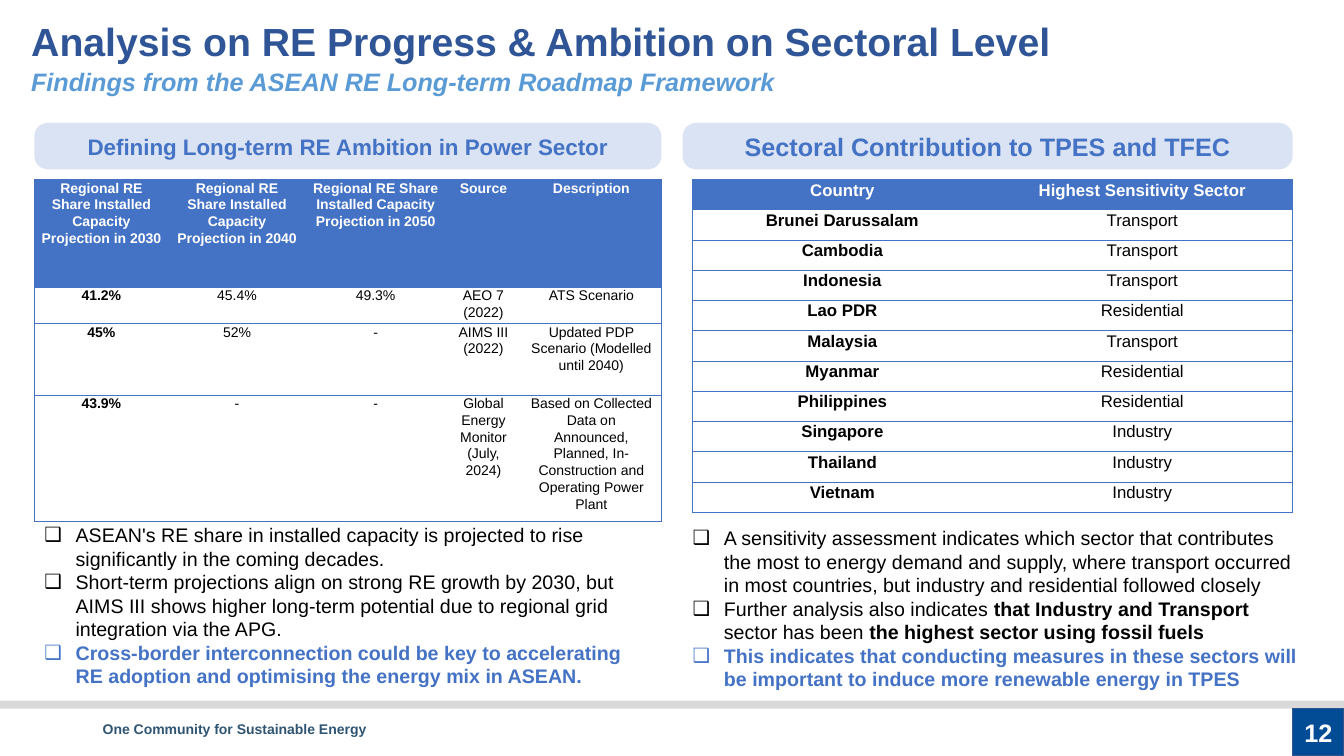
from lxml import etree
from pptx import Presentation
from pptx.dml.color import RGBColor
from pptx.enum.shapes import MSO_SHAPE
from pptx.enum.text import MSO_ANCHOR, MSO_AUTO_SIZE, PP_ALIGN
from pptx.oxml.ns import qn
from pptx.util import Inches, Pt

RECT, ROUNDED = MSO_SHAPE.RECTANGLE, MSO_SHAPE.ROUNDED_RECTANGLE
LEFT, CENTER = PP_ALIGN.LEFT, PP_ALIGN.CENTER
TOP, MIDDLE = MSO_ANCHOR.TOP, MSO_ANCHOR.MIDDLE
NO_AUTOFIT = MSO_AUTO_SIZE.NONE
TWO_CONTENT_LAYOUT = 3

COLORS = {
    "title": "2F5597", "subtitle": "5B9BD5", "accent": "4472C4",
    "banner": "DAE3F3", "rule": "D9D9D9", "number": "024C96",
    "number_edge": "325491", "motto": "2F5573",
    "white": "FFFFFF", "black": "000000",
}

AMBITION_ROWS = [
    ["Regional RE Share Installed Capacity Projection in 2030",
     "Regional RE Share Installed Capacity Projection in 2040",
     "Regional RE Share Installed Capacity Projection in 2050",
     "Source", "Description"],
    ["41.2%", "45.4%", "49.3%", "AEO 7 (2022)", "ATS Scenario"],
    ["45%", "52%", "-", "AIMS III (2022)",
     "Updated PDP Scenario (Modelled until 2040)"],
    ["43.9%", "-", "-", "Global Energy Monitor (July, 2024)",
     "Based on Collected Data on Announced, Planned, In-Construction "
     "and Operating Power Plant"],
]

SECTOR_ROWS = [
    ["Country", "Highest Sensitivity Sector"],
    ["Brunei Darussalam", "Transport"],
    ["Cambodia", "Transport"],
    ["Indonesia", "Transport"],
    ["Lao PDR", "Residential"],
    ["Malaysia", "Transport"],
    ["Myanmar", "Residential"],
    ["Philippines", "Residential"],
    ["Singapore", "Industry"],
    ["Thailand", "Industry"],
    ["Vietnam", "Industry"],
]

# Each point is a list of (text, bold) runs; the last point is the takeaway
AMBITION_POINTS = [
    [("ASEAN's RE share in installed capacity is projected to rise "
      "significantly in the coming decades.", False)],
    [("Short-term projections align on strong RE growth by 2030, but AIMS III "
      "shows higher long-term potential due to regional grid integration via "
      "the APG.", False)],
    [("Cross-border interconnection could be key to accelerating RE adoption "
      "and optimising the energy mix in ASEAN.", True)],
]
SECTOR_POINTS = [
    [("A sensitivity assessment indicates which sector that contributes the "
      "most to energy demand and supply, where transport occurred in most "
      "countries, but industry and residential followed closely", False)],
    [("Further analysis also indicates ", False),
     ("that Industry and Transport ", True),
     ("sector has been ", False),
     ("the highest sector using fossil fuels", True)],
    [("This indicates that conducting measures in these sectors will be "
      "important to induce more renewable energy in TPES", True)],
]


def rgb(name):
    return RGBColor.from_string(COLORS[name])


def style_font(font, size, color, bold=True, italic=False):
    values = {"name": "Arial", "size": Pt(size), "bold": bold, "italic": italic}
    for attribute, value in values.items():
        setattr(font, attribute, value)
    font.color.rgb = rgb(color)


def place(shape, left, top, width, height):
    box = {"left": left, "top": top, "width": width, "height": height}
    for attribute, value in box.items():
        setattr(shape, attribute, Inches(value))


def write_line(shape, text, size, color, align=LEFT, anchor=TOP,
               italic=False, wrap=True):
    frame = shape.text_frame
    frame.word_wrap, frame.vertical_anchor = wrap, anchor
    frame.auto_size = NO_AUTOFIT
    paragraph = frame.paragraphs[0]
    paragraph.alignment = align
    run = paragraph.add_run()
    run.text = text
    style_font(run.font, size, color, italic=italic)


def add_label(slide, box, text, size, color, **options):
    label = slide.shapes.add_textbox(*map(Inches, box))
    write_line(label, text, size, color, **options)


def add_block(slide, preset, box, fill, edge=None):
    block = slide.shapes.add_shape(preset, *map(Inches, box))
    block.shadow.inherit = False
    block.fill.solid()
    block.fill.fore_color.rgb = rgb(fill)
    if edge:
        block.line.color.rgb = rgb(edge)
        block.line.width = Pt(1)
    else:
        block.line.fill.background()
    return block


def add_banner(slide, left, width, text, size):
    banner = add_block(slide, ROUNDED, (left, 1.22, width, 0.46), "banner")
    banner.adjustments[0] = 0.29
    write_line(banner, text, size, "accent", CENTER, MIDDLE)


def set_borders(cell, first_column, last_column):
    shown = {"lnL": first_column, "lnR": last_column, "lnT": True, "lnB": True}
    properties = cell._tc.get_or_add_tcPr()
    for tag, visible in shown.items():
        line = etree.SubElement(properties, qn(f"a:{tag}"), w=str(Pt(0.5)))
        if visible:
            fill = etree.SubElement(line, qn("a:solidFill"))
            etree.SubElement(fill, qn("a:srgbClr"), val=COLORS["accent"])
        else:
            etree.SubElement(line, qn("a:noFill"))


def fill_cell(cell, text, size, header, bold):
    margins = {"margin_left": 0.07, "margin_right": 0.07,
               "margin_top": 0, "margin_bottom": 0}
    for attribute, value in margins.items():
        setattr(cell, attribute, Inches(value))
    cell.fill.solid()
    cell.fill.fore_color.rgb = rgb("accent" if header else "white")
    paragraph = cell.text_frame.paragraphs[0]
    paragraph.alignment, paragraph.line_spacing = CENTER, 1.07
    run = paragraph.add_run()
    run.text = text
    style_font(run.font, size, "white" if header else "black", bold)


def add_grid(slide, left, rows, widths, heights, size):
    box = (left, 1.78, sum(widths), sum(heights))
    grid = slide.shapes.add_table(len(rows), len(widths),
                                  *map(Inches, box)).table
    grid.horz_banding = False
    for column, width in zip(grid.columns, widths):
        column.width = Inches(width)
    for r, (texts, height) in enumerate(zip(rows, heights)):
        grid.rows[r].height = Inches(height)
        for c, text in enumerate(texts):
            cell = grid.cell(r, c)
            set_borders(cell, c == 0, c == len(widths) - 1)
            fill_cell(cell, text, size, r == 0, r == 0 or c == 0)


def write_points(body, box, points):
    place(body, *box)
    frame = body.text_frame
    frame.auto_size, frame.vertical_anchor = NO_AUTOFIT, TOP
    for index, runs in enumerate(points):
        paragraph = frame.paragraphs[0] if index == 0 else frame.add_paragraph()
        paragraph.space_before = Pt(0)
        properties = paragraph._p.get_or_add_pPr()
        properties.set("marL", str(Inches(0.31)))
        properties.set("indent", str(-Inches(0.31)))
        etree.SubElement(properties, qn("a:buChar"), char="❑")
        color = "accent" if index == len(points) - 1 else "black"
        for text, bold in runs:
            run = paragraph.add_run()
            run.text = text
            style_font(run.font, 14, color, bold)


def main():
    deck = Presentation()
    deck.slide_width, deck.slide_height = Inches(13.33), Inches(7.5)
    slide = deck.slides.add_slide(deck.slide_layouts[TWO_CONTENT_LAYOUT])
    title, ambition_body, sector_body = slide.placeholders

    # Footer
    add_block(slide, RECT, (0, 6.95, 13.33, 0.08), "rule")
    number = add_block(slide, RECT, (12.82, 7.03, 0.51, 0.47),
                       "number", "number_edge")
    write_line(number, "12", 18, "white", CENTER, MIDDLE, wrap=False)
    add_label(slide, (0.92, 7.1, 2.82, 0.27),
              "One Community for Sustainable Energy", 10, "motto")

    # Heading
    place(title, 0.21, 0.12, 12.61, 0.57)
    write_line(title, "Analysis on RE Progress & Ambition on Sectoral Level",
               28, "title")
    add_label(slide, (0.21, 0.61, 7.65, 0.4),
              "Findings from the ASEAN RE Long-term Roadmap Framework",
              18, "subtitle", italic=True, wrap=False)

    # Power sector ambition
    add_banner(slide, 0.34, 6.22,
               "Defining Long-term RE Ambition in Power Sector", 16)
    add_grid(slide, 0.34, AMBITION_ROWS, [1.33, 1.36, 1.39, 0.75, 1.39],
             [1.07, 0.36, 0.71, 1.25], 10)
    write_points(ambition_body, (0.34, 5.14, 6.22, 1.75), AMBITION_POINTS)

    # Sectoral contribution
    add_banner(slide, 6.77, 6.05, "Sectoral Contribution to TPES and TFEC", 18)
    add_grid(slide, 6.87, SECTOR_ROWS, [2.97, 2.98],
             [0.3] * len(SECTOR_ROWS), 12)
    write_points(sector_body, (6.77, 5.17, 6.22, 1.75), SECTOR_POINTS)

    deck.save("out.pptx")


if __name__ == "__main__":
    main()
